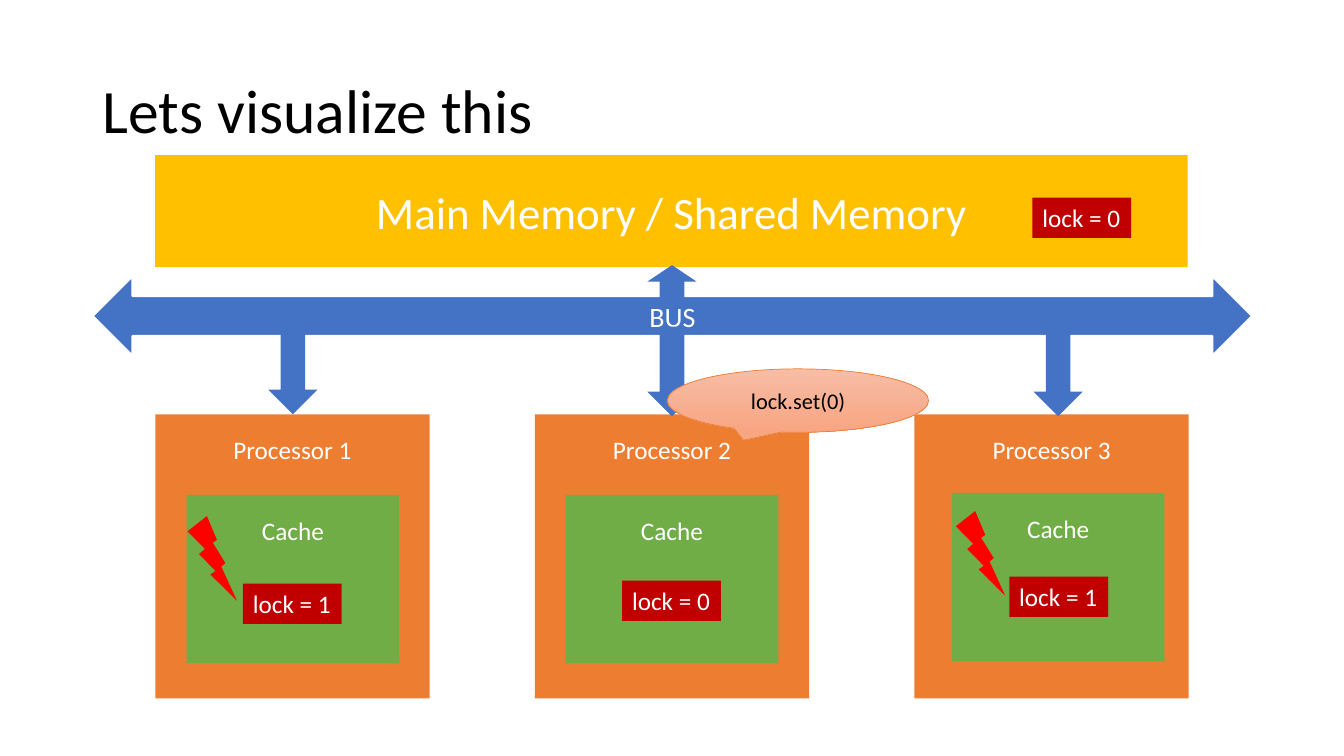
from pptx import Presentation
from pptx.dml.color import RGBColor
from pptx.enum.shapes import MSO_SHAPE
from pptx.enum.text import MSO_ANCHOR, MSO_AUTO_SIZE, PP_ALIGN
from pptx.util import Inches, Pt

COLORS = {
    "white": "FFFFFF", "black": "000000", "processor": "ED7D31",
    "cache": "70AD47", "bus": "4472C4", "memory": "FFC000",
    "lock": "C00000", "bolt": "FF0000",
    "callout_top": "F7BDA5", "callout_bottom": "F8A582",
}


def write(s, text, size, color="white", align=PP_ALIGN.CENTER,
          anchor=MSO_ANCHOR.MIDDLE, spacing=None, wrap=True):
    tf = s.text_frame
    tf.word_wrap = wrap
    tf.vertical_anchor = anchor
    p = tf.paragraphs[0]
    p.alignment = align
    p.line_spacing = spacing
    r = p.add_run()
    r.text = text
    for name, value in {"name": "Calibri", "size": Pt(size)}.items():
        setattr(r.font, name, value)
    r.font.color.rgb = RGBColor.from_string(COLORS[color])


def add_shape(kind, box, color):
    s = sp.add_shape(kind, *[Inches(v) for v in box])
    s.shadow.inherit = False
    s.fill.solid()
    s.fill.fore_color.rgb = RGBColor.from_string(COLORS[color])
    s.line.fill.background()
    return s


prs = Presentation()
prs.slide_width, prs.slide_height = Inches(13.33), Inches(7.5)
sp = prs.slides.add_slide(prs.slide_layouts[6]).shapes

title = sp.add_textbox(Inches(0.92), Inches(0.4), Inches(11.5), Inches(1.45))
write(title, "Lets visualize this", 44, "black", PP_ALIGN.LEFT, spacing=0.9)

for i in range(3):
    s = add_shape(MSO_SHAPE.RECTANGLE, (1.54 + i * 3.765, 4.11, 2.72, 2.82), "processor")
    write(s, f"Processor {i + 1}", 18, anchor=MSO_ANCHOR.TOP, spacing=1.5)

for left, top in [(1.85, 4.91), (5.61, 4.91), (9.44, 4.89)]:
    s = add_shape(MSO_SHAPE.RECTANGLE, (left, top, 2.11, 1.67), "cache")
    write(s, "Cache", 18, anchor=MSO_ANCHOR.TOP, spacing=1.5)

bus = add_shape(MSO_SHAPE.LEFT_RIGHT_ARROW, (0.92, 2.74, 11.5, 0.79), "bus")
bus.line.color.rgb = RGBColor.from_string(COLORS["white"])
bus.line.width = Pt(1.5)
write(bus, "BUS", 20)

for left, top, height in [(2.66, 3.13, 0.98), (6.42, 3.24, 0.89), (10.25, 3.24, 0.89)]:
    add_shape(MSO_SHAPE.DOWN_ARROW, (left, top, 0.49, height), "bus")

memory = add_shape(MSO_SHAPE.RECTANGLE, (1.54, 1.54, 10.24, 1.11), "memory")
write(memory, "Main Memory / Shared Memory", 32)
memory_arrow = add_shape(MSO_SHAPE.DOWN_ARROW, (6.42, 2.63, 0.49, 0.33), "bus")
memory_arrow.rotation = 180

for left, top, value in [(2.41, 5.79, 1), (10.24, 1.96, 0), (10.01, 5.72, 1), (6.17, 5.76, 0)]:
    s = add_shape(MSO_SHAPE.RECTANGLE, (left, top, 0.98, 0.4), "lock")
    write(s, f"lock = {value}", 18, align=PP_ALIGN.LEFT, anchor=MSO_ANCHOR.TOP, wrap=False)
    s.text_frame.auto_size = MSO_AUTO_SIZE.SHAPE_TO_FIT_TEXT

callout = add_shape(MSO_SHAPE.OVAL_CALLOUT, (6.62, 3.66, 2.59, 0.63), "callout_top")
callout.fill.gradient()
callout.fill.gradient_angle = 270
for stop, name in zip(callout.fill.gradient_stops, ("callout_top", "callout_bottom")):
    stop.color.rgb = RGBColor.from_string(COLORS[name])
callout.line.color.rgb = RGBColor.from_string(COLORS["processor"])
callout.line.width = Pt(0.5)
write(callout, "lock.set(0)", 16, "black")

for left, top in [(1.86, 5.12), (9.48, 5.07)]:
    add_shape(MSO_SHAPE.LIGHTNING_BOLT, (left, top, 0.49, 0.84), "bolt")

prs.save("out.pptx")
